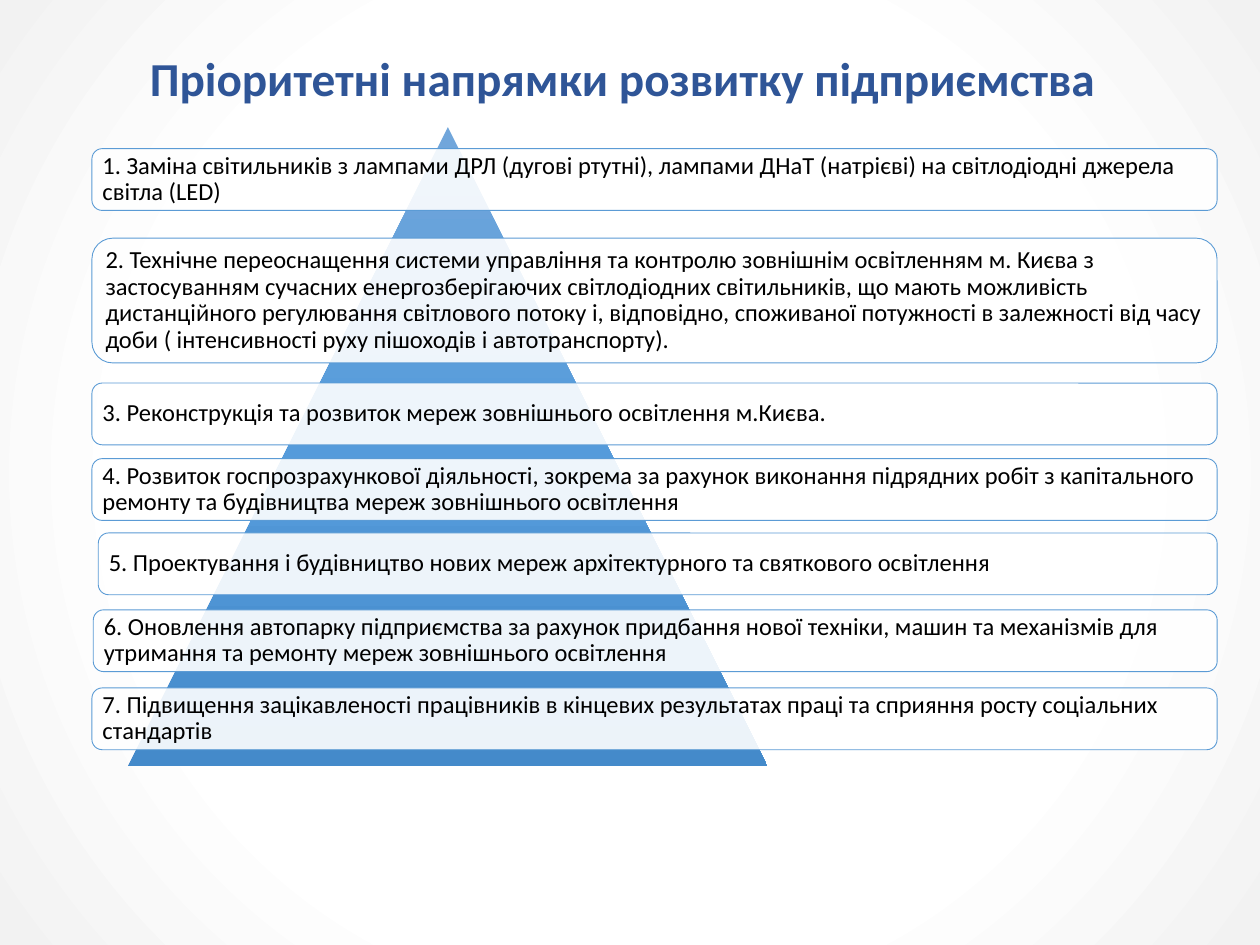
from dataclasses import dataclass

from lxml import etree
from pptx import Presentation
from pptx.dml.color import RGBColor
from pptx.enum.shapes import MSO_SHAPE
from pptx.enum.text import MSO_ANCHOR, MSO_AUTO_SIZE, PP_ALIGN
from pptx.oxml import parse_xml
from pptx.oxml.ns import nsdecls, qn
from pptx.util import Inches, Pt

RECTANGLE = MSO_SHAPE.RECTANGLE
TRIANGLE = MSO_SHAPE.ISOSCELES_TRIANGLE
ROUNDED = MSO_SHAPE.ROUNDED_RECTANGLE
TITLE_ONLY_LAYOUT = 5


@dataclass(frozen=True)
class Theme:
    font: str = "Calibri"
    title_color: str = "2F5597"
    text_color: str = "000000"
    box_fill: str = "FFFFFF"
    box_line: str = "5B9BD5"
    box_opacity: int = 90
    title_size: int = 27
    text_size: int = 14
    background: tuple = ((63, "FFFFFF"), (100, "F2F2F2"))
    pyramid: tuple = ((0, "71A6DB"), (50, "559BDB"), (100, "448ACA"))


THEME = Theme()
RADIAL = ('<a:path path="circle"><a:fillToRect l="50000" t="50000" '
          'r="50000" b="50000"/></a:path>')
DOWNWARD = '<a:lin ang="5400000" scaled="0"/>'

BOX_RIGHT = 9.66
BOX_HEIGHT = 0.49
TALL_BOX_HEIGHT = 0.99
BOX_INSET = 0.06

# Left, top, height and text of each priority
PRIORITIES = [
    (0.73, 1.18, BOX_HEIGHT,
     "1. Заміна світильників з лампами ДРЛ (дугові ртутні), лампами ДНаТ "
     "(натрієві) на світлодіодні джерела світла (LED)"),
    (0.73, 1.89, TALL_BOX_HEIGHT,
     "2. Технічне переоснащення системи управління та контролю зовнішнім "
     "освітленням м. Києва з застосуванням сучасних енергозберігаючих "
     "світлодіодних світильників, що мають можливість дистанційного "
     "регулювання світлового потоку і, відповідно, споживаної потужності в "
     "залежності від часу доби ( інтенсивності руху пішоходів і "
     "автотранспорту)."),
    (0.73, 3.04, BOX_HEIGHT,
     "3. Реконструкція та розвиток мереж зовнішнього освітлення м.Києва."),
    (0.73, 3.64, BOX_HEIGHT,
     "4. Розвиток госпрозрахункової діяльності, зокрема за рахунок виконання "
     "підрядних робіт з капітального ремонту та будівництва мереж "
     "зовнішнього освітлення"),
    (0.78, 4.23, BOX_HEIGHT,
     "5. Проектування і будівництво нових мереж архітектурного та святкового "
     "освітлення"),
    (0.74, 4.84, BOX_HEIGHT,
     "6. Оновлення автопарку підприємства за рахунок придбання нової техніки, "
     "машин та механізмів для утримання та ремонту мереж зовнішнього "
     "освітлення"),
    (0.73, 5.46, BOX_HEIGHT,
     "7. Підвищення зацікавленості працівників в кінцевих результатах праці "
     "та сприяння росту соціальних стандартів"),
]


def format_text(paragraph, size, color, bold=False):
    font = paragraph.font
    font.name = THEME.font
    font.size = Pt(size)
    font.bold = bold
    font.color.rgb = RGBColor.from_string(color)


def add_plain_shape(slide, kind, left, top, width, height):
    shape = slide.shapes.add_shape(
        kind, Inches(left), Inches(top), Inches(width), Inches(height))
    shape.shadow.inherit = False
    return shape


def add_gradient_shape(slide, kind, bounds, stops, direction):
    """Add an unlined shape; stops are (percent, colour) pairs."""
    shape = add_plain_shape(slide, kind, *bounds)
    shape.line.fill.background()
    stop_list = "".join(
        f'<a:gs pos="{percent * 1000}"><a:srgbClr val="{color}"/></a:gs>'
        for percent, color in stops)
    gradient = parse_xml(
        f'<a:gradFill {nsdecls("a")} rotWithShape="1">'
        f'<a:gsLst>{stop_list}</a:gsLst>{direction}</a:gradFill>')
    shape.element.spPr.find(qn("a:prstGeom")).addnext(gradient)
    return shape


def set_title(slide, text):
    title = slide.shapes.title
    title.left, title.top = Inches(0.85), Inches(0.34)
    title.width, title.height = Inches(8.18), Inches(0.56)
    frame = title.text_frame
    frame.text = text
    frame.word_wrap = True
    frame.auto_size = MSO_AUTO_SIZE.NONE
    frame.vertical_anchor = MSO_ANCHOR.TOP
    paragraph = frame.paragraphs[0]
    paragraph.alignment = PP_ALIGN.CENTER
    format_text(paragraph, THEME.title_size, THEME.title_color, bold=True)


def add_background(slide, width, height):
    background = add_gradient_shape(
        slide, RECTANGLE, (0, 0, width, height), THEME.background, RADIAL)
    slide.shapes.title.element.addprevious(background.element)


def add_priority_box(slide, left, top, height, text):
    box = add_plain_shape(slide, ROUNDED, left, top, BOX_RIGHT - left, height)
    box.fill.solid()
    box.fill.fore_color.rgb = RGBColor.from_string(THEME.box_fill)
    color = box.element.spPr.find(qn("a:solidFill")).find(qn("a:srgbClr"))
    etree.SubElement(color, qn("a:alpha"), val=str(THEME.box_opacity * 1000))
    box.line.color.rgb = RGBColor.from_string(THEME.box_line)
    box.line.width = Pt(0.5)

    frame = box.text_frame
    frame.text = text
    frame.word_wrap = True
    frame.vertical_anchor = MSO_ANCHOR.MIDDLE
    frame.margin_left = frame.margin_right = Inches(BOX_INSET)
    frame.margin_top = frame.margin_bottom = Inches(BOX_INSET)
    paragraph = frame.paragraphs[0]
    paragraph.alignment = PP_ALIGN.LEFT
    paragraph.line_spacing = 0.9
    format_text(paragraph, THEME.text_size, THEME.text_color)


def main():
    width, height = 10, 7.5
    presentation = Presentation()
    presentation.slide_width = Inches(width)
    presentation.slide_height = Inches(height)
    slide = presentation.slides.add_slide(
        presentation.slide_layouts[TITLE_ONLY_LAYOUT])

    add_background(slide, width, height)
    set_title(slide, "Пріоритетні напрямки розвитку підприємства")
    add_gradient_shape(
        slide, TRIANGLE, (1.02, 1.01, 5.07, 5.07), THEME.pyramid, DOWNWARD)
    for priority in PRIORITIES:
        add_priority_box(slide, *priority)

    presentation.save("out.pptx")


if __name__ == "__main__":
    main()
